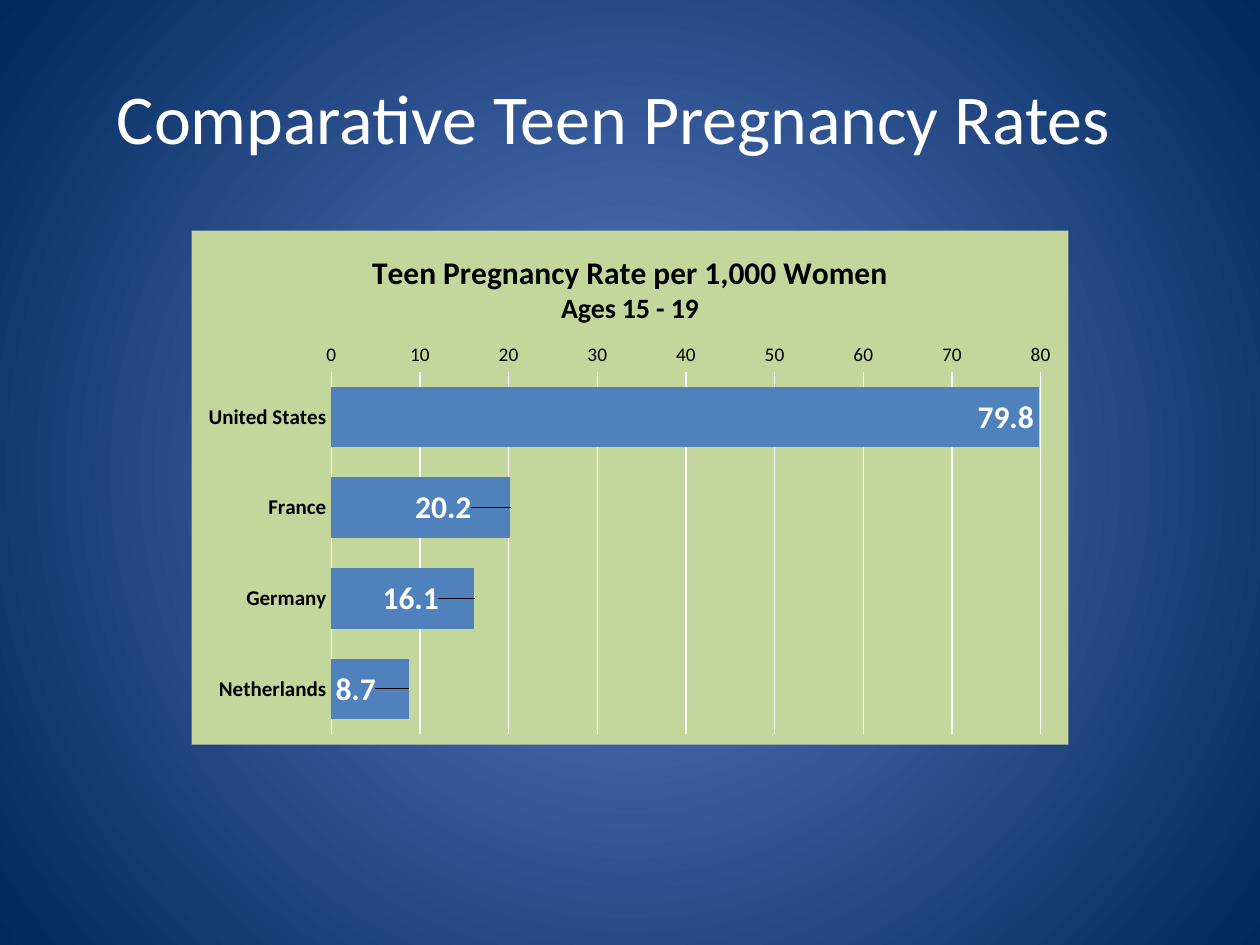
from pptx import Presentation
from pptx.chart.data import CategoryChartData
from pptx.dml.color import RGBColor
from pptx.enum.chart import XL_CHART_TYPE, XL_LABEL_POSITION, XL_TICK_MARK
from pptx.enum.text import MSO_ANCHOR, PP_ALIGN
from pptx.oxml import parse_xml
from pptx.oxml.ns import nsdecls, qn
from pptx.util import Inches, Pt

COLORS = {"white": "FFFFFF", "black": "000000", "panel": "C3D69B",
          "bar": "4F81BD", "glow": "5E7CC5", "edge": "00295C"}
FONT = "Calibri"
RATES = {"United States": 79.8, "France": 20.2, "Germany": 16.1, "Netherlands": 8.7}
LABEL_SHIFTS = [0, -0.27, -0.24, -0.22]
CHART_BOX = (1.52, 1.83, 6.96, 4.08)
PLOT_BOX = (2.63, 2.95, 5.63, 2.88)


def rgb(name):
    """Return the named colour."""
    return RGBColor.from_string(COLORS[name])


def style_font(font, size, color="black", bold=False):
    """Apply the slide's typeface with the given format."""
    font.name, font.size, font.bold = FONT, Pt(size), bold
    font.color.rgb = rgb(color)


def write(paragraph, text, align=PP_ALIGN.CENTER, **style):
    """Put formatted text in a paragraph."""
    paragraph.alignment = align
    run = paragraph.add_run()
    run.text = text
    style_font(run.font, **style)


def manual_layout(x, y, **extent):
    """Return a chart layout given in fractions of the chart."""
    target = '<c:layoutTarget val="inner"/>' if extent else ""
    modes = '<c:xMode val="edge"/><c:yMode val="edge"/>' if extent else ""
    values = {"x": x, "y": y, **extent}
    numbers = "".join(f'<c:{key} val="{value}"/>' for key, value in values.items())
    return parse_xml(f'<c:layout {nsdecls("c")}><c:manualLayout>{target}{modes}'
                     f'{numbers}</c:manualLayout></c:layout>')


class RateSlide:
    """Hold the slide and draw its parts in one style."""

    def __init__(self, deck):
        self.slide = deck.slides.add_slide(deck.slide_layouts[6])

    def background(self):
        """Fill the background with a circular glow."""
        fill = self.slide.background.fill
        fill.gradient()
        for stop, name, position in zip(fill.gradient_stops, ("glow", "edge"), (0, 1)):
            stop.color.rgb = rgb(name)
            stop.position = position
        linear = next(self.slide.element.iter(qn("a:lin")))
        linear.getparent().replace(linear, parse_xml(
            f'<a:path {nsdecls("a")} path="circle">'
            '<a:fillToRect l="50000" t="50000" r="50000" b="50000"/></a:path>'))

    def heading(self, text, box):
        """Add the slide heading."""
        frame = self.slide.shapes.add_textbox(*map(Inches, box)).text_frame
        frame.word_wrap = True
        frame.vertical_anchor = MSO_ANCHOR.MIDDLE
        frame.margin_right = Inches(0.36)
        write(frame.paragraphs[0], text, size=40, color="white")

    def rate_chart(self, title_lines):
        """Add the bar chart of rates by country."""
        data = CategoryChartData()
        data.categories = list(RATES)
        data.add_series("Series 1", list(RATES.values()))
        chart = self.slide.shapes.add_chart(
            XL_CHART_TYPE.BAR_CLUSTERED, *map(Inches, CHART_BOX), data).chart
        style_font(chart.font, size=10, color="white")
        chart.has_legend = False
        self.chart_title(chart, title_lines)
        self.axes(chart)
        self.bars(chart.plots[0])
        self.panel(chart)

    def chart_title(self, chart, lines):
        """Write the chart title, one paragraph a line."""
        chart.has_title = True
        frame = chart.chart_title.text_frame
        chart.chart_title.include_in_layout = False
        for index, (text, size) in enumerate(lines):
            paragraph = frame.add_paragraph() if index else frame.paragraphs[0]
            write(paragraph, text, size=size, bold=True)

    def axes(self, chart):
        """Format both axes and the gridlines."""
        countries, scale = chart.category_axis, chart.value_axis
        for axis in (countries, scale):
            axis.major_tick_mark = axis.minor_tick_mark = XL_TICK_MARK.NONE
        countries.reverse_order = True
        style_font(countries.tick_labels.font, size=12, bold=True)
        style_font(scale.tick_labels.font, size=11)
        scale.minimum_scale, scale.maximum_scale, scale.major_unit = 0, 80, 10
        scale.format.line.fill.background()
        for line in (countries.format.line, scale.major_gridlines.format.line):
            line.color.rgb = rgb("white")
            line.width = Pt(0.75)

    def bars(self, plot):
        """Colour the bars and place their values."""
        plot.gap_width = 50
        plot.vary_by_categories = False
        series = plot.series[0]
        series.format.fill.solid()
        series.format.fill.fore_color.rgb = rgb("bar")
        for index, shift in enumerate(LABEL_SHIFTS):
            label = series.points[index].data_label
            style_font(label.font, size=18, color="white", bold=True)
            label.position = XL_LABEL_POSITION.INSIDE_END
        series.data_labels.show_value = True
        style_font(series.data_labels.font, size=18, color="white", bold=True)
        for node, shift in zip(plot.series[0].data_labels._element.iter(qn("c:dLbl")),
                               LABEL_SHIFTS):
            if shift:
                node.find(qn("c:idx")).addnext(manual_layout(shift / CHART_BOX[2], 0))

    def panel(self, chart):
        """Fill the chart area and fix the plot position."""
        left, top, width, height = CHART_BOX
        x, y, w, h = PLOT_BOX
        space = chart.element
        space.find(qn("c:txPr")).addprevious(parse_xml(
            f'<c:spPr {nsdecls("c", "a")}><a:solidFill><a:srgbClr val="{COLORS["panel"]}"/>'
            '</a:solidFill><a:ln><a:noFill/></a:ln></c:spPr>'))
        plot_area = next(space.iter(qn("c:plotArea")))
        for automatic in plot_area.findall(qn("c:layout")):
            plot_area.remove(automatic)
        plot_area.insert(0, manual_layout((x - left) / width, (y - top) / height,
                                          w=w / width, h=h / height))


def main():
    """Build and save the deck."""
    deck = Presentation()
    deck.slide_width, deck.slide_height = Inches(10), Inches(7.5)
    page = RateSlide(deck)
    page.background()
    page.heading("Comparative Teen Pregnancy Rates", (0.5, 0.3, 9, 1.25))
    page.rate_chart([("Teen Pregnancy Rate per 1,000 Women", 18), ("Ages 15 - 19", 16)])
    deck.save("out.pptx")


if __name__ == "__main__":
    main()
